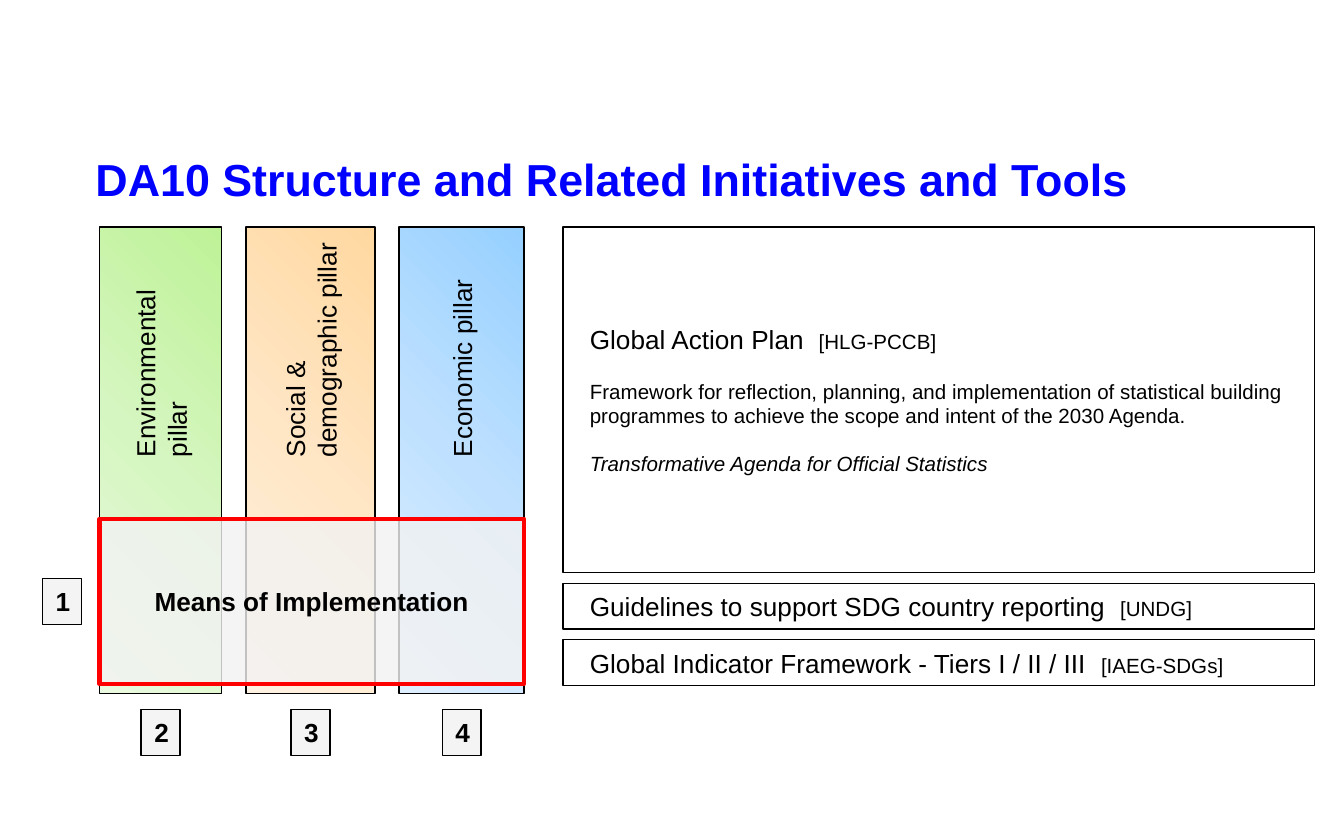
from dataclasses import dataclass

from lxml.etree import SubElement
from pptx import Presentation
from pptx.dml.color import RGBColor
from pptx.enum.shapes import MSO_SHAPE as Shape
from pptx.enum.text import MSO_ANCHOR as Anchor, MSO_AUTO_SIZE as AutoSize, PP_ALIGN as Align
from pptx.oxml.ns import qn
from pptx.util import Inches, Pt


@dataclass(frozen=True)
class Theme:
    font: str = "Arial"
    title: str = "0000FF"
    ink: str = "000000"
    paper: str = "FFFFFF"
    panel: str = "F2F2F2"
    accent: str = "FF0000"
    title_size: float = 24
    label_size: float = 14
    note_size: float = 11
    thin: float = 0.75
    thick: float = 2.25


THEME = Theme()

# Content
TITLE = "DA10 Structure and Related Initiatives and Tools"
FOUNDATION = ("1", "Means of Implementation")
PILLARS = [  # number, label, left, width, gradient from the top right corner
    ("2", "Environmental pillar", 0.74, 0.91, ("BEF297", "D5F6C0", "EAFAE0")),
    ("3", "Social & demographic pillar", 1.83, 0.96, ("FFD8A0", "FFE6C5", "FFF2E3")),
    ("4", "Economic pillar", 2.97, 0.93, ("96D0FF", "BFE1FF", "E0EFFF")),
]
INITIATIVES = [  # name, source, further paragraphs as (text, italic), height
    ("Global Action Plan", "[HLG-PCCB]", [
        ("Framework for reflection, planning, and implementation of statistical building "
         "programmes to achieve the scope and intent of the 2030 Agenda.", False),
        ("Transformative Agenda for Official Statistics", True)], 2.57),
    ("Guidelines to support SDG country reporting", "[UNDG]", [], 0.34),
    ("Global Indicator Framework - Tiers I / II / III", "[IAEG-SDGs]", [], 0.34),
]

# Grid, in inches
TOP, PILLAR_HEIGHT = 1.69, 3.47
PILLAR_INDENT, INITIATIVE_INDENT = 1.66, 0.1
BAND_TOP, BAND_HEIGHT = 3.86, 1.23
INITIATIVE_LEFT, INITIATIVE_WIDTH, INITIATIVE_GAP = 4.19, 5.59, 0.08
BADGE_WIDTH, BADGE_HEIGHT = 0.29, 0.34
BADGE_COLUMN, BADGE_ROW = 0.46, 5.45  # centre lines of the badges


def style(span, size, color=THEME.ink, bold=False, italic=False):
    span.font.name = THEME.font
    span.font.size = Pt(size)
    span.font.bold = bold
    span.font.italic = italic
    span.font.color.rgb = RGBColor.from_string(color)


def add_box(page, left, top, width, height, fill=THEME.paper, line=THEME.ink, weight=THEME.thin):
    box = page.shapes.add_shape(Shape.RECTANGLE, *map(Inches, (left, top, width, height)))
    box.shadow.inherit = False
    box.fill.solid()
    box.fill.fore_color.rgb = RGBColor.from_string(fill)
    box.line.color.rgb = RGBColor.from_string(line)
    box.line.width = Pt(weight)
    box.text_frame.word_wrap = True
    box.text_frame.vertical_anchor = Anchor.MIDDLE
    return box


def add_span(para, text, size, **look):
    span = para.add_run()
    span.text = text
    style(span, size, **look)


def indent(para, inches):
    para.alignment = Align.LEFT
    properties = para._p.get_or_add_pPr()
    properties.set("marL", str(Inches(inches)))
    properties.set("indent", "0")


def corner_gradient(box, colors):
    box.fill.gradient()
    gradient = box._element.spPr.find(qn("a:gradFill"))
    for child in list(gradient):
        gradient.remove(child)
    stops = SubElement(gradient, qn("a:gsLst"))
    for number, color in enumerate(colors):
        stop = SubElement(stops, qn("a:gs"), pos=str(number * 50000))
        SubElement(stop, qn("a:srgbClr"), val=color)
    focus = SubElement(gradient, qn("a:path"), path="circle")
    SubElement(focus, qn("a:fillToRect"), l="100000", b="100000")


def add_panel(page, text, left, top, width, height, **outline):
    """Translucent grey box with a bold centred label."""
    box = add_box(page, left, top, width, height, fill=THEME.panel, **outline)
    color = box._element.spPr.find(qn("a:solidFill"))[0]
    SubElement(color, qn("a:alpha"), val="80000")
    para = box.text_frame.paragraphs[0]
    para.alignment = Align.CENTER
    add_span(para, text, THEME.label_size, bold=True)


def add_badge(page, number, center_x, center_y):
    add_panel(page, number, center_x - BADGE_WIDTH / 2, center_y - BADGE_HEIGHT / 2,
              BADGE_WIDTH, BADGE_HEIGHT)


def add_pillar(page, label, left, width, colors):
    box = add_box(page, left, TOP, width, PILLAR_HEIGHT)
    corner_gradient(box, colors)
    box.text_frame._txBody.bodyPr.set("vert", "vert270")
    para = box.text_frame.paragraphs[0]
    indent(para, PILLAR_INDENT)
    add_span(para, label, THEME.label_size)


def add_initiative(page, name, source, details, top, height):
    frame = add_box(page, INITIATIVE_LEFT, top, INITIATIVE_WIDTH, height).text_frame
    para = frame.paragraphs[0]
    indent(para, INITIATIVE_INDENT)
    add_span(para, f"{name}  ", THEME.label_size)
    add_span(para, source, THEME.note_size)
    for text, italic in details:
        para = frame.add_paragraph()
        indent(para, INITIATIVE_INDENT)
        para.space_before = Pt(THEME.note_size * 1.15)
        add_span(para, text, THEME.note_size, italic=italic)


def add_title(page):
    title = page.shapes.title
    title.left, title.top, title.width, title.height = map(Inches, (0.61, 1.09, 9.16, 0.47))
    frame = title.text_frame
    frame.text = TITLE
    frame.auto_size = AutoSize.NONE
    frame.vertical_anchor = Anchor.MIDDLE
    frame.paragraphs[0].alignment = Align.LEFT
    style(frame.paragraphs[0].runs[0], THEME.title_size, color=THEME.title, bold=True)


def main():
    deck = Presentation()
    deck.slide_width, deck.slide_height = Inches(10), Inches(6.25)
    page = deck.slides.add_slide(deck.slide_layouts[5])
    add_title(page)

    # Pillars with their numbers below
    for number, label, left, width, colors in PILLARS:
        add_pillar(page, label, left, width, colors)
        add_badge(page, number, left + width / 2, BADGE_ROW)

    # Band across all pillars
    number, label = FOUNDATION
    band_left = PILLARS[0][2]
    band_right = PILLARS[-1][2] + PILLARS[-1][3]
    add_panel(page, label, band_left, BAND_TOP, band_right - band_left, BAND_HEIGHT,
              line=THEME.accent, weight=THEME.thick)
    add_badge(page, number, BADGE_COLUMN, BAND_TOP + BAND_HEIGHT / 2)

    # Stack of related initiatives
    top = TOP
    for name, source, details, height in INITIATIVES:
        add_initiative(page, name, source, details, top, height)
        top += height + INITIATIVE_GAP

    deck.save("out.pptx")


if __name__ == "__main__":
    main()
